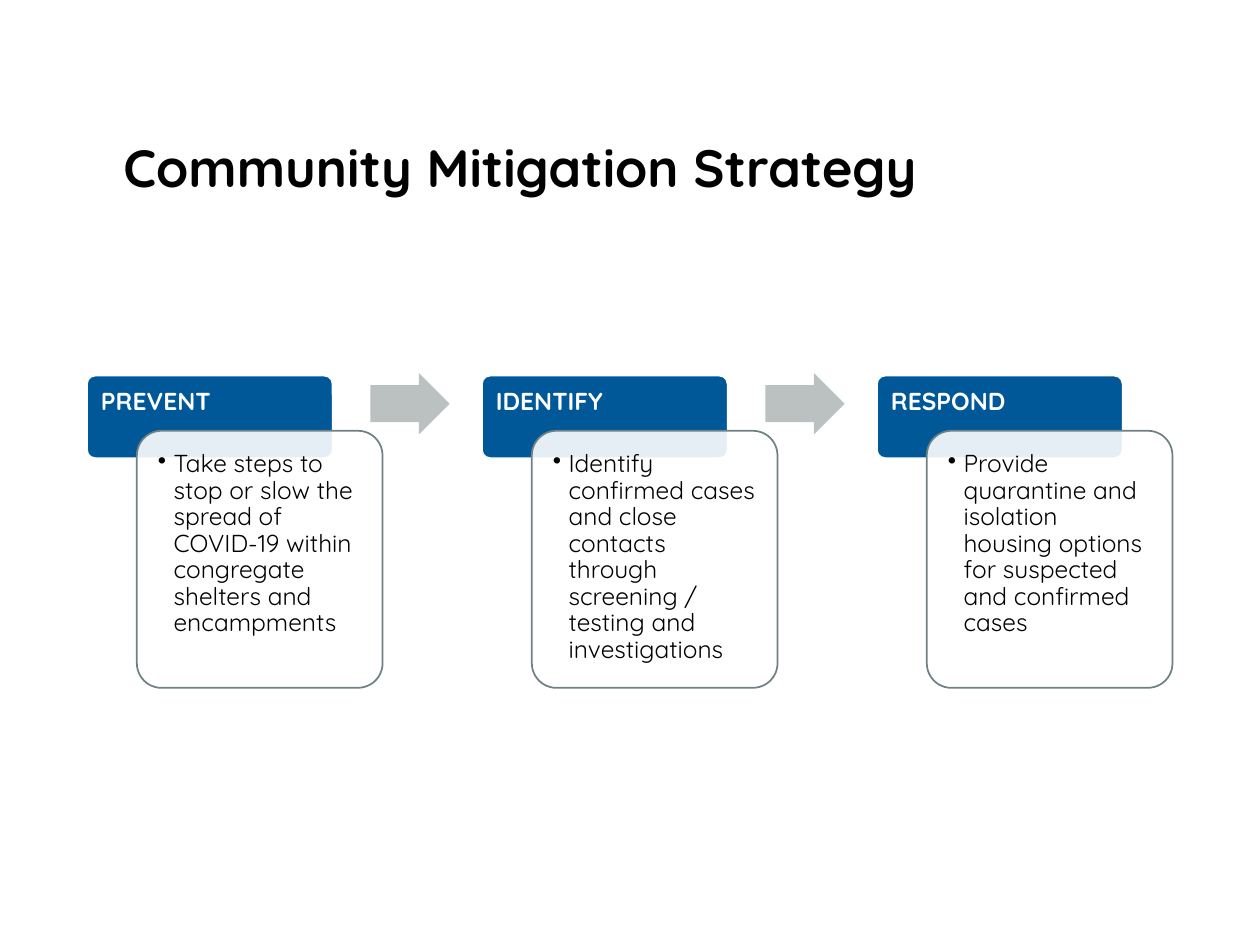
from lxml import etree
from pptx import Presentation
from pptx.dml.color import RGBColor
from pptx.enum import shapes, text
from pptx.oxml.ns import qn
from pptx.util import Pt

# Content
TITLE = "Community Mitigation Strategy"
STEPS = [
    ("PREVENT", "Take steps to stop or slow the spread of COVID-19 within "
                "congregate shelters and encampments"),
    ("IDENTIFY", "Identify confirmed cases and close contacts through "
                 "screening / testing and investigations"),
    ("RESPOND", "Provide quarantine and isolation housing options for "
                "suspected and confirmed cases"),
]

# Style
HUES = {"blue": "005899", "white": "FFFFFF", "black": "000000",
        "edge": "6F8183", "gray": "BBC1C1"}
FONT = "Quicksand"
HEAD = {"size": Pt(14), "bold": True}
BODY = {"size": Pt(14), "bold": False}
MAIN = {"size": Pt(30), "bold": True}

# Layout in points
LEFT, TOP, PITCH, WIDE = 49.7, 214.6, 225.7, 140.4
CARD_X, CARD_Y, CARD_H = 28.5, 246.2, 146.9
ARROW_X, PAD = 162, 4

deck = Presentation()
deck.slide_width, deck.slide_height = Pt(720), Pt(540)
slide = deck.slides.add_slide(deck.slide_layouts[6])


def hue(name):
    return RGBColor.from_string(HUES[name])


def add_form(kind, box, adjust, fill, edge=None, alpha=None):
    form = slide.shapes.add_shape(kind, *map(Pt, box))
    form.shadow.inherit = False
    for i, value in enumerate(adjust):
        form.adjustments[i] = value
    form.fill.solid()
    form.fill.fore_color.rgb = hue(fill)
    if alpha:
        tint = form.fill._xPr.find(".//" + qn("a:srgbClr"))
        etree.SubElement(tint, qn("a:alpha"), val=str(alpha * 1000))
    if edge:
        form.line.color.rgb = hue(edge)
        form.line.width = Pt(1)
    else:
        form.line.fill.background()


def add_words(words, box, style, color, inset, anchor="TOP", bullet=False):
    frame = slide.shapes.add_textbox(*map(Pt, box)).text_frame
    sides = ("left", "top", "right", "bottom")
    form = {"margin_" + side: Pt(gap) for side, gap in zip(sides, inset)}
    form.update(word_wrap=True, vertical_anchor=text.MSO_ANCHOR[anchor])
    for key, value in form.items():
        setattr(frame, key, value)
    para = frame.paragraphs[0]
    para.line_spacing = 0.9
    if bullet:
        props = para._p.get_or_add_pPr()
        props.set("marL", str(Pt(9)))
        props.set("indent", str(-Pt(9)))
        etree.SubElement(props, qn("a:buChar"), char="•")
    run = para.add_run()
    run.text = words
    for key, value in {"name": FONT, **style}.items():
        setattr(run.font, key, value)
    run.font.color.rgb = hue(color)


# Title
add_words(TITLE, (63.4, 38.2, 594, 118.8), MAIN, "black",
          (7.2, 3.6, 7.2, 3.6), "MIDDLE")

# Steps, with an arrow between neighbours
ROUND = shapes.MSO_SHAPE.ROUNDED_RECTANGLE
for i, (head, body) in enumerate(STEPS):
    x = LEFT + i * PITCH
    card = x + CARD_X
    add_form(ROUND, (x, TOP, WIDE, 47.2), [0.1], "blue", "white")
    add_words(head, (x, TOP, WIDE, 31.5), HEAD, "white", (8, 8, 8, 4))
    add_form(ROUND, (card, CARD_Y, WIDE, CARD_H), [0.1], "white", "edge", 90)
    add_words(body, (card + PAD, CARD_Y + PAD, WIDE - 2 * PAD,
                     CARD_H - 2 * PAD), BODY, "black", (8,) * 4, bullet=True)
    if i < len(STEPS) - 1:
        add_form(shapes.MSO_SHAPE.RIGHT_ARROW,
                 (x + ARROW_X, 213.1, 45.2, 35.2), [0.6, 0.5], "gray")

deck.save("out.pptx")
